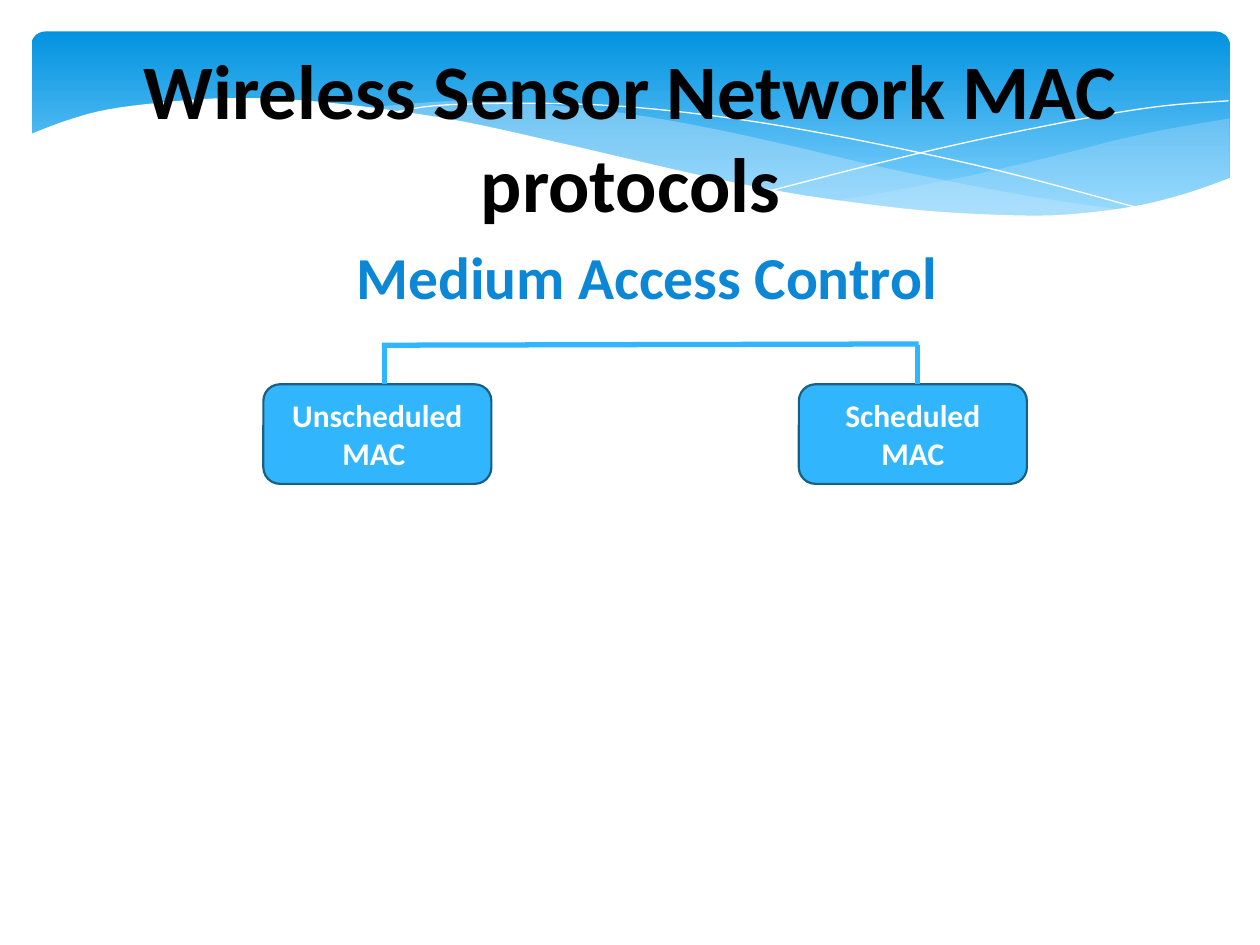
import pptx
import pptx.dml.color
import pptx.enum.dml
import pptx.enum.shapes
import pptx.enum.text
import pptx.oxml.ns
import pptx.util
from lxml import etree

RGBColor = pptx.dml.color.RGBColor
Shape = pptx.enum.shapes.MSO_SHAPE
Anchor = pptx.enum.text.MSO_ANCHOR

BLACK = RGBColor(0x00, 0x00, 0x00)
WHITE = RGBColor(0xFF, 0xFF, 0xFF)
BAND_TOP = RGBColor(0x02, 0x93, 0xE0)
BAND_BOTTOM = RGBColor(0x83, 0xD3, 0xFE)
WAVE = RGBColor(0xC6, 0xE7, 0xFC)
HEADING = RGBColor(0x0B, 0x87, 0xD6)
NODE = RGBColor(0x31, 0xB6, 0xFD)
NODE_EDGE = RGBColor(0x19, 0x5F, 0x84)

WIDTH, HEIGHT = pptx.util.Inches(10), pptx.util.Inches(7.5)
COLUMNS, ROWS = 1000, 750
FONT = "Calibri"

RIGHT_WAVE = [
    [(951, 69), (910, 76), (866, 85), (807, 100), (728, 118), (636, 135)],
    [(636, 135), (694, 142), (744, 146), (789, 147), (829, 145), (872, 140),
     (910, 131), (951, 116)],
]
LEFT_WAVE = [
    [(868, 142), (782, 129), (681, 109), (604, 91), (530, 75), (464, 64),
     (395, 57), (336, 55), (261, 61)],
    [(261, 61), (337, 72), (424, 91), (505, 110), (593, 128), (670, 140),
     (736, 146), (793, 148), (832, 146), (868, 142)],
]
FALLING_LINE = [(284, 65), (319, 59), (376, 57), (444, 58), (508, 63),
                (583, 73), (670, 89), (770, 111), (882, 141)]
RISING_LINE = [(588, 126), (670, 105), (751, 86), (841, 68), (899, 59), (950, 55)]
LOWER_EDGE = [(952, 116), (915, 129), (874, 139), (825, 145), (784, 146),
              (719, 143), (663, 137), (601, 128), (530, 114), (422, 89),
              (340, 71), (267, 60), (205, 54), (152, 53), (107, 56),
              (60, 62), (27, 71), (-2, 82)]
LOWER_CORNERS = [(-2, 199), (952, 199)]


def place(column, row):
    """Turn a grid position into slide lengths."""
    return round(column * WIDTH / COLUMNS), round(row * HEIGHT / ROWS)


def frame(box):
    """Turn a grid box into left, top, width and height."""
    return *place(*box[:2]), *place(*box[2:])


def smooth(knots, steps=5):
    """Return the points of a Catmull-Rom curve through the knots."""
    padded = [knots[0], *knots, knots[-1]]
    points = [knots[0]]
    for a, b, c, d in zip(padded, padded[1:], padded[2:], padded[3:]):
        for step in range(1, steps + 1):
            t = step / steps
            points.append(tuple(
                (2 * q + (r - p) * t + (2 * p - 5 * q + 4 * r - s) * t ** 2
                 + (3 * q - p - 3 * r + s) * t ** 3) / 2
                for p, q, r, s in zip(a, b, c, d)))
    return points


def write_text(shape, text, *, size, color, anchor=Anchor.TOP):
    """Write one centred bold paragraph into a shape."""
    text_frame = shape.text_frame
    text_frame.word_wrap = True
    text_frame.auto_size = pptx.enum.text.MSO_AUTO_SIZE.NONE
    text_frame.vertical_anchor = anchor
    para = text_frame.paragraphs[0]
    para.alignment = pptx.enum.text.PP_ALIGN.CENTER
    span = para.add_run()
    span.text = text
    span.font.name = FONT
    span.font.size = pptx.util.Pt(size)
    span.font.bold = True
    span.font.color.rgb = color


def add_curve(page, box, points, fill=None, opacity=100):
    """Draw a filled outline, or a white hairline when no fill is given."""
    spots = [place(box[0] + x, box[1] + y) for x, y in points]
    builder = page.shapes.build_freeform(*spots[0], scale=1.0)
    builder.add_line_segments(spots[1:], close=fill is not None)
    curve = builder.convert_to_shape()
    curve.shadow.inherit = False
    if fill is None:
        curve.fill.background()
        curve.line.color.rgb = WHITE
        curve.line.width = pptx.util.Pt(0)
        return
    curve.line.fill.background()
    curve.fill.solid()
    curve.fill.fore_color.rgb = fill
    if opacity < 100:
        color = curve.element.spPr.find(".//" + pptx.oxml.ns.qn("a:srgbClr"))
        etree.SubElement(color, pptx.oxml.ns.qn("a:alpha"), val=str(opacity * 1000))


def draw_header(page, box):
    """Draw the gradient band with its waves."""
    band = page.shapes.add_shape(Shape.ROUNDED_RECTANGLE, *frame(box))
    band.adjustments[0] = 0.07
    band.shadow.inherit = False
    band.line.fill.background()
    band.fill.gradient()
    band.fill.gradient_angle = 270
    stops = zip(band.fill.gradient_stops, (0, 0.9), (BAND_TOP, BAND_BOTTOM))
    for stop, position, color in stops:
        stop.position = position
        stop.color.rgb = color
    for (upper, lower), opacity in ((RIGHT_WAVE, 29), (LEFT_WAVE, 40)):
        add_curve(page, box, smooth(upper) + smooth(lower)[1:], WAVE, opacity)
    for knots in (FALLING_LINE, RISING_LINE):
        add_curve(page, box, smooth(knots))
    add_curve(page, box, smooth(LOWER_EDGE) + LOWER_CORNERS, WHITE)


def draw_title(page, box):
    """Place the title in front of the header."""
    title = page.shapes.title
    title.left, title.top, title.width, title.height = frame(box)
    write_text(title, "Wireless Sensor Network MAC protocols", size=44, color=BLACK)
    page.shapes.element.append(title.element)


def draw_heading(page, box):
    """Place the root label of the tree."""
    heading = page.shapes.add_textbox(*frame(box))
    write_text(heading, " Medium Access Control", size=34, color=HEADING)


def draw_node(page, box, text):
    """Draw one rounded node of the tree."""
    node = page.shapes.add_shape(Shape.ROUNDED_RECTANGLE, *frame(box))
    node.shadow.inherit = False
    node.fill.solid()
    node.fill.fore_color.rgb = NODE
    node.line.color.rgb = NODE_EDGE
    node.line.width = pptx.util.Pt(1.25)
    write_text(node, text, size=18, color=WHITE, anchor=Anchor.MIDDLE)


def draw_branch(page, start, end):
    """Draw one straight branch between two grid positions."""
    branch = page.shapes.add_connector(
        pptx.enum.shapes.MSO_CONNECTOR.STRAIGHT, *place(*start), *place(*end))
    branch.line.color.rgb = NODE
    branch.line.width = pptx.util.Pt(3)
    etree.SubElement(branch.element.spPr, pptx.oxml.ns.qn("a:effectLst"))


def draw_tree(page, box):
    """Draw the two nodes and the bracket that joins them."""
    left, top, width, height = box
    node_width, node_height = 181, 79
    right, node_top = left + width - node_width, top + height - node_height
    draw_node(page, (right, node_top, node_width, node_height), "Scheduled MAC")
    draw_node(page, (left, node_top, node_width, node_height), "Unscheduled MAC ")
    stems = (left + 96, right + 94)
    draw_branch(page, (stems[0] - 2, top + 1), (stems[1] + 1, top))
    for stem in stems:
        draw_branch(page, (stem, top + 1), (stem, node_top))


def main():
    """Build the slide and save it."""
    deck = pptx.Presentation()
    deck.slide_width, deck.slide_height = WIDTH, HEIGHT
    page = deck.slides.add_slide(deck.slide_layouts.get_by_name("Title Only"))
    page.background.fill.solid()
    page.background.fill.fore_color.rgb = WHITE
    draw_header(page, (25, 25, 951, 156))
    draw_title(page, (28, 29, 945, 158))
    draw_heading(page, (59, 186, 898, 67))
    draw_tree(page, (209, 273, 606, 111))
    deck.save("out.pptx")


if __name__ == "__main__":
    main()
